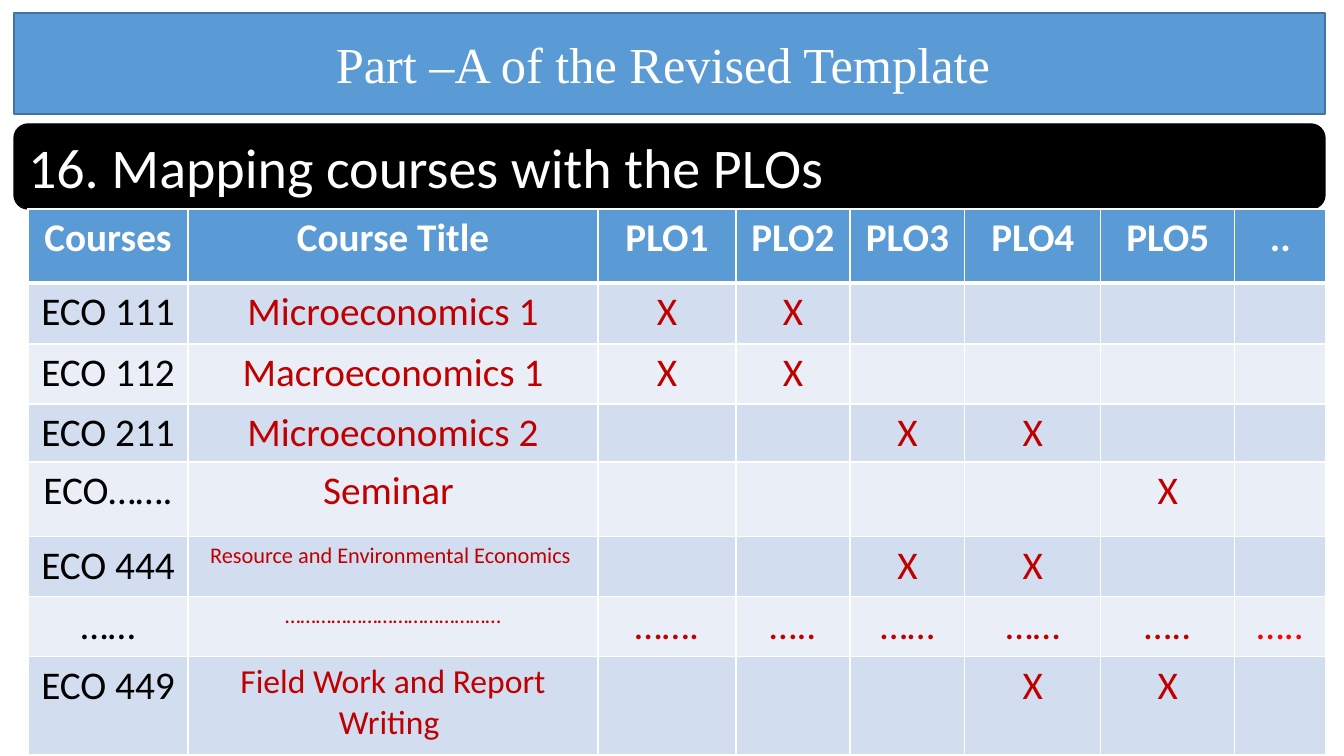
from dataclasses import dataclass

from lxml import etree
from pptx import Presentation, util as u
from pptx.dml.color import RGBColor
from pptx.enum import shapes, text
from pptx.oxml.ns import qn

EMU_PER_PX = 914400 / 100.8
BLUE, WHITE, BLACK = "5B9BD5", "FFFFFF", "000000"
DARK_RED, RED = "C00000", "FF0000"
BANDS = ("D2DEEF", "EAEFF7")
LEFT, CENTER = text.PP_ALIGN.LEFT, text.PP_ALIGN.CENTER

COLUMN_WIDTHS = (160, 410, 138, 114, 115, 136, 134, 91)
ROW_HEIGHTS = (74, 61, 60, 58, 75, 60, 60, 98)
HEADINGS = ("Courses", "Course Title", "PLO1", "PLO2", "PLO3", "PLO4", "PLO5", "..")


@dataclass(frozen=True)
class Banner:
    wording: str
    top: int
    height: int
    fill: str
    line: str
    font: str
    size: int
    align: text.PP_ALIGN


@dataclass(frozen=True)
class Course:
    code: str
    title: str
    marks: tuple[str, ...]
    title_size: int = 28


def outcomes(*numbers: int) -> tuple[str, ...]:
    """Mark the given PLO numbers with an X across the six PLO columns."""
    return tuple("X" if number in numbers else "" for number in range(1, 7))


TITLE = Banner("Part –A of the Revised Template ", 13, 101, BLUE, "43739E",
               "Times New Roman", 36, CENTER)
SECTION = Banner("16. Mapping courses with the PLOs", 124, 85, BLACK, BLACK,
                 "Calibri", 40, LEFT)
COURSES = (
    Course("ECO 111", "Microeconomics 1", outcomes(1, 2)),
    Course("ECO 112", "Macroeconomics 1", outcomes(1, 2)),
    Course("ECO 211", "Microeconomics 2", outcomes(3, 4)),
    Course("ECO…….", "Seminar ", outcomes(5)),
    Course("ECO 444", "Resource and Environmental Economics ", outcomes(3, 4), 16),
    Course("……", "……………………………………", ("…….", "…..", "……", "……", "…..", "….."), 16),
    Course("ECO 449", "Field Work and Report Writing ", outcomes(4, 5), 24),
)


def px(length: int) -> u.Emu:
    return u.Emu(round(length * EMU_PER_PX))


def rgb(color: str) -> RGBColor:
    return RGBColor.from_string(color)


def write(frame, wording: str, *, size: int, color: str, font: str = "Calibri",
          bold: bool = False, align: text.PP_ALIGN = CENTER) -> None:
    paragraph = frame.paragraphs[0]
    paragraph.alignment = align
    run = paragraph.add_run()
    run.text = wording
    run.font.name, run.font.size, run.font.bold = font, u.Pt(size), bold
    run.font.color.rgb = rgb(color)


def style_banner(shape, banner: Banner) -> None:
    shape.fill.solid()
    shape.fill.fore_color.rgb = rgb(banner.fill)
    shape.line.color.rgb = rgb(banner.line)
    shape.line.width = u.Pt(1)
    frame = shape.text_frame
    frame.word_wrap = True
    frame.auto_size = text.MSO_AUTO_SIZE.NONE
    frame.vertical_anchor = text.MSO_ANCHOR.MIDDLE
    write(frame, banner.wording, size=banner.size, color=WHITE,
          font=banner.font, align=banner.align)


def banner_box(banner: Banner) -> tuple[u.Emu, ...]:
    return px(14), px(banner.top), px(1311), px(banner.height)


def draw_title(slide, banner: Banner) -> None:
    title = slide.shapes.title
    title.left, title.top, title.width, title.height = banner_box(banner)
    outline = etree.SubElement(title._element.spPr, qn("a:prstGeom"), prst="roundRect")
    etree.SubElement(outline, qn("a:avLst"))
    style_banner(title, banner)


def draw_section(slide, banner: Banner) -> None:
    section = slide.shapes.add_shape(shapes.MSO_SHAPE.ROUNDED_RECTANGLE, *banner_box(banner))
    section.shadow.inherit = False
    style_banner(section, banner)


def style_cell(cell, fill: str, top: int = 1, bottom: int = 1) -> None:
    """Give the cell white borders, with top and bottom widths in points, and a fill."""
    properties = cell._tc.get_or_add_tcPr()
    for side, points in (("L", 1), ("R", 1), ("T", top), ("B", bottom)):
        border = etree.SubElement(properties, qn(f"a:ln{side}"), w=str(u.Pt(points)))
        solid = etree.SubElement(border, qn("a:solidFill"))
        etree.SubElement(solid, qn("a:srgbClr"), val=WHITE)
    cell.fill.solid()
    cell.fill.fore_color.rgb = rgb(fill)


def draw_mapping(slide) -> None:
    mapping = slide.shapes.add_table(
        len(ROW_HEIGHTS), len(COLUMN_WIDTHS), px(28), px(209),
        px(sum(COLUMN_WIDTHS)), px(sum(ROW_HEIGHTS))).table
    for column, width in zip(mapping.columns, COLUMN_WIDTHS):
        column.width = px(width)
    for row, height in zip(mapping.rows, ROW_HEIGHTS):
        row.height = px(height)

    for column, heading in enumerate(HEADINGS):
        cell = mapping.cell(0, column)
        style_cell(cell, BLUE, bottom=3)
        write(cell.text_frame, heading, size=28, color=WHITE, bold=True)

    colors = (BLACK, *[DARK_RED] * 6, RED)
    for row, course in enumerate(COURSES, start=1):
        entries = (course.code, course.title, *course.marks)
        for column, (entry, color) in enumerate(zip(entries, colors)):
            cell = mapping.cell(row, column)
            style_cell(cell, BANDS[(row - 1) % 2], top=3 if row == 1 else 1)
            if entry:
                size = course.title_size if column == 1 else 28
                write(cell.text_frame, entry, size=size, color=color)


def main() -> None:
    deck = Presentation()
    deck.slide_width, deck.slide_height = px(1344), px(756)
    slide = deck.slides.add_slide(deck.slide_layouts.get_by_name("Title Only"))
    draw_title(slide, TITLE)
    draw_section(slide, SECTION)
    draw_mapping(slide)
    deck.save("out.pptx")


if __name__ == "__main__":
    main()
